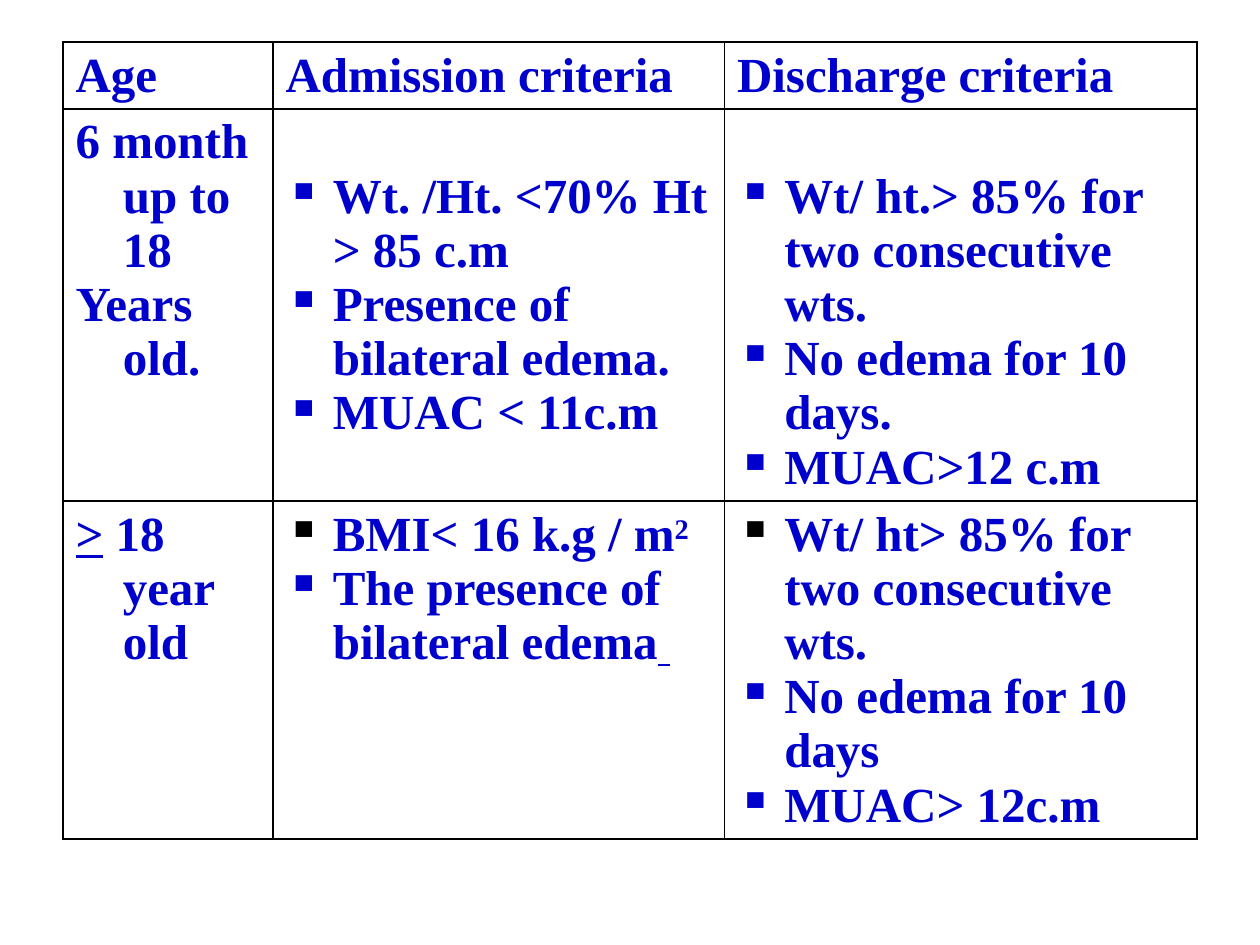
"""Build a slide with a table of admission and discharge criteria by age."""
from lxml.etree import SubElement
from pptx import Presentation
from pptx.dml.color import RGBColor
from pptx.oxml.ns import qn
from pptx.util import Pt


def color(value):
    return RGBColor.from_string(value)


def add_text(paragraph, text, size=28, font="Times New Roman", fill="0000CC",
             bold=True, underline=False, baseline=0):
    run = paragraph.add_run()
    run.text = text
    run.font.size = Pt(size)
    run.font.name = font
    run.font.bold = bold
    run.font.underline = underline
    run.font.color.rgb = color(fill)
    if baseline:
        run.font._element.set("baseline", str(baseline * 1000))


presentation = Presentation()
presentation.slide_width = Pt(720)
presentation.slide_height = Pt(540)
slide = presentation.slides.add_slide(presentation.slide_layouts[6])

column_widths = [120, 258, 270]
row_heights = [38, 224, 193]
criteria = [
    [["Age"], ["Admission criteria"], ["Discharge criteria"]],
    [
        ["6 month up to 18", "Years old."],
        ["Wt. /Ht. <70% Ht > 85 c.m", "Presence of bilateral edema.", "MUAC < 11c.m"],
        ["Wt/ ht.> 85% for two consecutive wts.", "No edema for 10 days.", "MUAC>12 c.m"],
    ],
    [
        [[(">", {"underline": True}), (" 18 year old", {})]],
        [
            [("BMI< 16 k.g / m", {}), ("2", {"baseline": 24})],
            [("The presence of bilateral edema", {}), (" ", {"underline": True})],
        ],
        ["Wt/ ht> 85% for two consecutive wts.", "No edema for 10 days", "MUAC> 12c.m"],
    ],
]

shape = slide.shapes.add_table(3, 3, Pt(36), Pt(24), Pt(sum(column_widths)), Pt(sum(row_heights)))
table = shape.table
table.first_row = False
table.horz_banding = False
for column, width in zip(table.columns, column_widths):
    column.width = Pt(width)
for row, height in zip(table.rows, row_heights):
    row.height = Pt(height)

for row_index, row_content in enumerate(criteria):
    for column_index, lines in enumerate(row_content):
        cell = table.cell(row_index, column_index)
        bulleted = row_index > 0 and column_index > 0
        if bulleted and row_index == 1:
            cell.margin_top = Pt(34.6)
        cell_properties = cell._tc.get_or_add_tcPr()
        for side in ("a:lnL", "a:lnR", "a:lnT", "a:lnB"):
            border = SubElement(cell_properties, qn(side), w=str(Pt(1)))
            border_fill = SubElement(border, qn("a:solidFill"))
            SubElement(border_fill, qn("a:srgbClr"), val="000000")
        cell.fill.background()

        for line_index, line in enumerate(lines):
            frame = cell.text_frame
            paragraph = frame.add_paragraph() if line_index else frame.paragraphs[0]
            properties = paragraph._p.get_or_add_pPr()
            properties.set("marL", str(Pt(27)))
            properties.set("indent", str(-Pt(27)))
            if bulleted:
                black = row_index == 2 and line_index == 0
                bullet_color = SubElement(properties, qn("a:buClr"))
                SubElement(bullet_color, qn("a:srgbClr"), val="000000" if black else "0000CC")
                SubElement(properties, qn("a:buChar"), char="▪")
            else:
                SubElement(properties, qn("a:buNone"))
            for text, style in [(line, {})] if isinstance(line, str) else line:
                add_text(paragraph, text, **style)

presentation.save("out.pptx")
